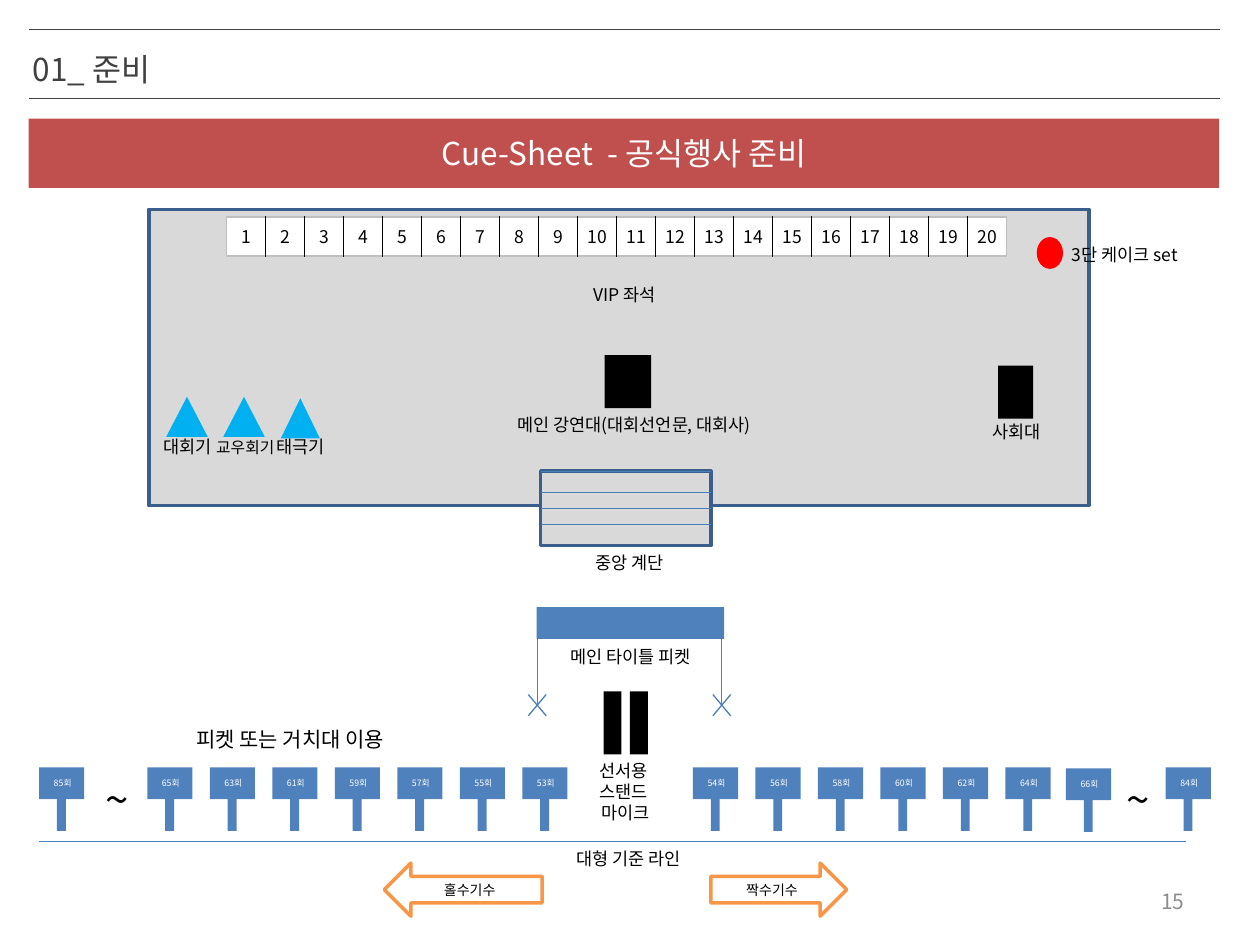
from typing import NamedTuple, Optional

from pptx import Presentation
from pptx.dml.color import RGBColor
from pptx.enum.shapes import MSO_CONNECTOR, MSO_SHAPE
from pptx.enum.text import MSO_ANCHOR, MSO_AUTO_SIZE, PP_ALIGN
from pptx.oxml.ns import qn
from pptx.util import Cm, Pt
from lxml.etree import SubElement

FONT = "Noto Sans CJK KR"
BLACK = RGBColor(0x00, 0x00, 0x00)
WHITE = RGBColor(0xFF, 0xFF, 0xFF)
DARK = RGBColor(0x40, 0x40, 0x40)
GRAY = RGBColor(0x8C, 0x8C, 0x8C)
PALE = RGBColor(0xD9, 0xD9, 0xD9)
SILVER = RGBColor(0xBF, 0xBF, 0xBF)
BRICK = RGBColor(0xC0, 0x50, 0x4D)
NAVY = RGBColor(0x3A, 0x5F, 0x8C)
BLUE = RGBColor(0x4F, 0x81, 0xBD)
STEEL = RGBColor(0x4B, 0x7E, 0xBC)
SKY = RGBColor(0x00, 0xB0, 0xF0)
RED = RGBColor(0xFF, 0x00, 0x00)
ORANGE = RGBColor(0xF7, 0x96, 0x46)


class Box(NamedTuple):
    x: float
    y: float
    w: float
    h: float


class Label(NamedTuple):
    text: str
    box: Box
    size: float = 10
    wrap: bool = False
    align: PP_ALIGN = PP_ALIGN.LEFT
    color: RGBColor = BLACK
    anchor: MSO_ANCHOR = MSO_ANCHOR.TOP


class Block(NamedTuple):
    kind: MSO_SHAPE
    box: Box
    fill: RGBColor
    line: Optional[RGBColor] = None


class Picket(NamedTuple):
    term: int
    x: float
    y: float = 15.47


def style(frame, size: float, color: RGBColor, align: PP_ALIGN) -> None:
    for par in frame.paragraphs:
        par.alignment = align
        font = par.font
        font.size, font.name = Pt(size), FONT
        font.color.rgb = color
        SubElement(font._element, qn("a:ea"), typeface=FONT)


def add_block(slide, block: Block, text: str = "", size: float = 10,
              color: RGBColor = WHITE):
    shape = slide.shapes.add_shape(block.kind, *map(Cm, block.box))
    shape.shadow.inherit = False
    shape.fill.solid()
    shape.fill.fore_color.rgb = block.fill
    if block.line is None:
        shape.line.fill.background()
    else:
        shape.line.color.rgb = block.line
        shape.line.width = Pt(2)
    if text:
        frame = shape.text_frame
        frame.text = text
        frame.vertical_anchor = MSO_ANCHOR.MIDDLE
        style(frame, size, color, PP_ALIGN.CENTER)
    return shape


def add_label(slide, label: Label) -> None:
    frame = slide.shapes.add_textbox(*map(Cm, label.box)).text_frame
    frame.text = label.text
    frame.word_wrap = label.wrap
    frame.vertical_anchor = label.anchor
    if label.anchor == MSO_ANCHOR.TOP:
        frame.auto_size = MSO_AUTO_SIZE.SHAPE_TO_FIT_TEXT
    style(frame, label.size, label.color, label.align)


def add_line(slide, x1: float, y1: float, x2: float, y2: float,
             color: RGBColor = STEEL, width: float = 0.75):
    line = slide.shapes.add_connector(
        MSO_CONNECTOR.STRAIGHT, Cm(x1), Cm(y1), Cm(x2), Cm(y2))
    line.line.color.rgb = color
    line.line.width = Pt(width)
    SubElement(line._element.spPr, qn("a:effectLst"))
    return line


def add_picket(slide, picket: Picket) -> None:
    term, x, y = picket
    sign = Block(MSO_SHAPE.RECTANGLE, Box(x, y, 0.91, 0.64), BLUE)
    pole = Block(MSO_SHAPE.RECTANGLE, Box(x + 0.36, y + 0.64, 0.18, 0.64), BLUE)
    add_block(slide, sign, f" {term}회 ", 5)
    add_block(slide, pole)


def add_edge(cell, side: str, color: RGBColor) -> None:
    edge = SubElement(cell._tc.get_or_add_tcPr(), qn(f"a:{side}"), w=str(Pt(1)))
    fill = SubElement(edge, qn("a:solidFill"))
    SubElement(fill, qn("a:srgbClr"), val=str(color))


def add_seats(slide, box: Box, count: int) -> None:
    table = slide.shapes.add_table(1, count, *map(Cm, box)).table
    table.first_row = table.horz_banding = False
    table.rows[0].height = Cm(box.h)
    for i in range(count):
        table.columns[i].width = Cm(box.w / count)
        cell = table.cell(0, i)
        cell.text = str(i + 1)
        cell.vertical_anchor = MSO_ANCHOR.MIDDLE
        cell.margin_left = cell.margin_right = Cm(0.1)
        cell.margin_top = cell.margin_bottom = Cm(0.13)
        style(cell.text_frame, 10, BLACK, PP_ALIGN.CENTER)
        add_edge(cell, "lnL", BLACK if i else SILVER)
        add_edge(cell, "lnR", BLACK if i < count - 1 else SILVER)
        add_edge(cell, "lnT", SILVER)
        add_edge(cell, "lnB", SILVER)
        cell.fill.solid()
        cell.fill.fore_color.rgb = WHITE


RECT, CONE = MSO_SHAPE.RECTANGLE, MSO_SHAPE.ISOSCELES_TRIANGLE
BLOCKS = [
    Block(RECT, Box(3, 4.22, 18.95, 5.97), PALE, NAVY),  # stage
    Block(RECT, Box(12.19, 7.16, 0.94, 1.07), BLACK),  # main podium
    Block(RECT, Box(20.12, 7.37, 0.71, 1.07), BLACK),  # host podium
    Block(CONE, Box(3.35, 8, 0.84, 0.81), SKY),  # flags
    Block(CONE, Box(4.5, 8, 0.84, 0.81), SKY),
    Block(CONE, Box(5.66, 8.03, 0.79, 0.81), SKY),
    Block(MSO_SHAPE.OVAL, Box(20.9, 4.78, 0.53, 0.64), RED),  # cake
    Block(RECT, Box(10.82, 12.24, 3.78, 0.64), BLUE),  # title picket
    Block(RECT, Box(12.17, 13.94, 0.36, 1.27), BLACK),  # microphones
    Block(RECT, Box(12.7, 13.94, 0.36, 1.27), BLACK),
]
LABELS = [
    Label("메인 강연대(대회선언문, 대회사)", Box(10.19, 8.23, 5.69, 0.69)),
    Label("사회대", Box(19.76, 8.36, 1.57, 0.69)),
    Label("태극기", Box(5.33, 8.66, 1.57, 0.69)),
    Label("대회기", Box(3.05, 8.66, 1.57, 0.69)),
    Label("교우회기", Box(4.11, 8.69, 1.8, 0.64), 9),
    Label("VIP 좌석", Box(11.71, 5.61, 2.01, 0.69)),
    Label("3단 케이크 set", Box(21.36, 4.8, 2.84, 0.69)),
    Label("중앙 계단", Box(11.76, 11, 2.06, 0.69)),
    Label("메인 타이틀 피켓", Box(11.25, 12.9, 3.25, 0.69)),
    Label("~", Box(1.88, 15.47, 1.12, 1.27), 24),
    Label("~", Box(22.45, 15.47, 1.12, 1.27), 24),
    Label("대형 기준 라인", Box(11.38, 16.97, 2.9, 0.69)),
    Label("선서용 \n스탠드 \n마이크", Box(11.35, 15.19, 2.51, 1.55), 10, True,
          PP_ALIGN.CENTER),
    Label("피켓 또는 거치대 이용", Box(3.71, 14.53, 7.39, 0.76), 12, True),
    Label("15", Box(18.21, 17.65, 5.92, 1.02), 12, True, PP_ALIGN.RIGHT, GRAY,
          MSO_ANCHOR.MIDDLE),
]
STEP = 1.26
PICKETS = [Picket(85, 0.79), Picket(66, 21.49, 15.49), Picket(84, 23.5)]
PICKETS += [Picket(65 - 2 * i, 2.97 + i * STEP) for i in range(7)]
PICKETS += [Picket(54 + 2 * i, 13.97 + i * STEP) for i in range(6)]


def main() -> None:
    deck = Presentation()
    deck.slide_width, deck.slide_height = Cm(25.4), Cm(19.05)
    slide = deck.slides.add_slide(deck.slide_layouts[5])

    # Title between two rules, then the banner
    title = slide.shapes.title
    title.left, title.top, title.width, title.height = map(
        Cm, Box(0.41, 0.99, 18.21, 0.91))
    title.text_frame.text = "01_ 준비"
    title.text_frame.paragraphs[0].line_spacing = 0.85
    style(title.text_frame, 18, DARK, PP_ALIGN.LEFT)
    for y in (0.58, 1.98):
        add_line(slide, 0.58, y, 24.59, y, DARK, 0.25)
    banner = Block(RECT, Box(0.58, 2.39, 24, 1.4), BRICK)
    add_block(slide, banner, "Cue-Sheet  - 공식행사 준비", 18)

    # Stage and what stands on it
    for block in BLOCKS:
        add_block(slide, block)
    add_seats(slide, Box(4.57, 4.37, 15.72, 0.79), 20)

    # Stairs, the middle tread joined to both sides
    stairs = add_block(slide, Block(RECT, Box(10.9, 9.5, 3.43, 1.5), PALE, NAVY))
    for y in (9.5, 9.93, 10.57):
        add_line(slide, 10.9, y, 14.33, y)
    tread = add_line(slide, 10.9, 10.25, 14.33, 10.25)
    tread.begin_connect(stairs, 1)
    tread.end_connect(stairs, 3)

    # Strings of the title picket, each ending in a cross
    for x in (10.83, 14.55):
        add_line(slide, x, 12.3, x, 14.22)
        add_line(slide, x - 0.18, 14, x + 0.18, 14.43)
        add_line(slide, x + 0.18, 14, x - 0.18, 14.43)

    # Pickets on the base line
    for picket in PICKETS:
        add_picket(slide, picket)
    add_line(slide, 0.79, 16.97, 23.9, 16.97)

    # Arrows for odd and even terms
    arrow = MSO_SHAPE.RIGHT_ARROW
    odd = Block(arrow, Box(7.75, 17.4, 3.18, 1.07), WHITE, ORANGE)
    even = Block(arrow, Box(14.33, 17.4, 2.74, 1.07), WHITE, ORANGE)
    left = add_block(slide, odd, "홀수기수", 8, BLACK)
    left._element.spPr.find(qn("a:xfrm")).set("flipH", "1")
    add_block(slide, even, "짝수기수", 8, BLACK)

    for label in LABELS:
        add_label(slide, label)
    deck.save("out.pptx")


if __name__ == "__main__":
    main()
